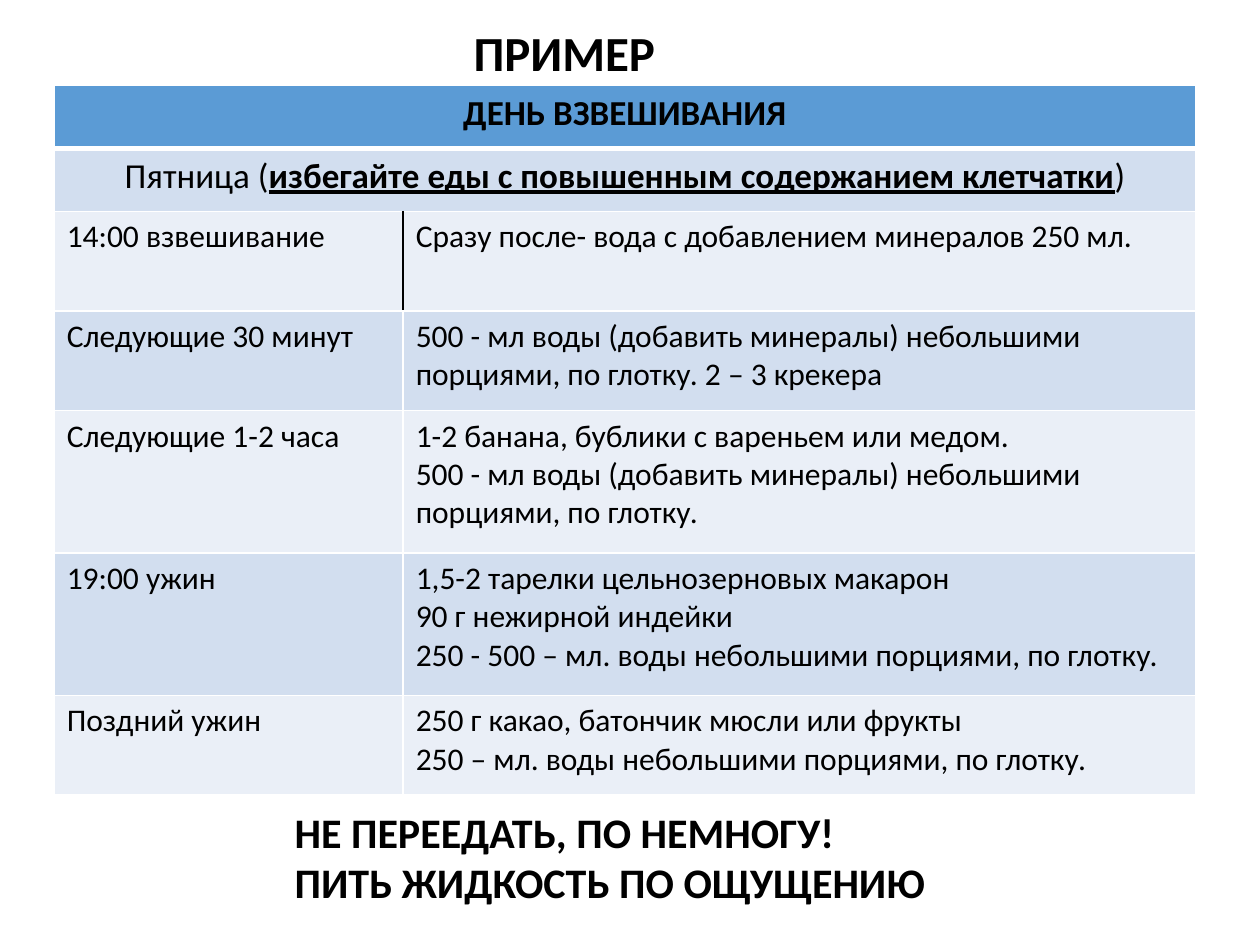
import pptx
import pptx.dml.color
import pptx.enum.text
import pptx.util
from lxml import etree
from pptx.oxml.ns import qn

SLIDE_WIDTH, SLIDE_HEIGHT = 10, 7.5
COLUMN_WIDTHS = [2.77, 6.29]
ROW_HEIGHTS = [0.5, 0.5, 0.79, 0.79, 1.13, 1.13, 0.79]
HEADER_FILL, BAND_FILLS = "5B9BD5", ["EAEFF7", "D2DEEF"]
WHITE, BLACK = "FFFFFF", "000000"
CENTER = pptx.enum.text.PP_ALIGN.CENTER

HEADINGS = [
    [("ДЕНЬ ВЗВЕШИВАНИЯ", {"bold": True})],
    [
        ("Пятница (", {}),
        ("избегайте еды с повышенным содержанием клетчатки", {"bold": True, "underline": True}),
        (")", {}),
    ],
]
SCHEDULE = [
    ("14:00 взвешивание", ["Сразу после- вода с добавлением минералов 250 мл."]),
    ("Следующие 30 минут", [
        "500 - мл воды (добавить минералы) небольшими порциями, по глотку. 2 – 3 крекера",
    ]),
    ("Следующие 1-2 часа", [
        "1-2 банана, бублики с вареньем или медом.",
        "500 - мл воды (добавить минералы) небольшими порциями, по глотку.",
    ]),
    ("19:00 ужин", [
        "1,5-2 тарелки цельнозерновых макарон",
        "90 г нежирной индейки",
        "250 - 500 – мл. воды небольшими порциями, по глотку.",
    ]),
    ("Поздний ужин", [
        "250 г какао, батончик мюсли или фрукты",
        "250 – мл. воды небольшими порциями, по глотку.",
    ]),
]


def color(hex_value):
    return pptx.dml.color.RGBColor.from_string(hex_value)


def inches(*values):
    return [pptx.util.Inches(value) for value in values]


def write_paragraphs(frame, paragraphs, size, alignment=None):
    """Fill a text frame; each paragraph is a list of (text, format) runs."""
    for index, runs in enumerate(paragraphs):
        paragraph = frame.add_paragraph() if index else frame.paragraphs[0]
        paragraph.alignment = alignment
        for text, run_format in runs:
            run = paragraph.add_run()
            run.text = text
            values = {"name": "Calibri", "size": pptx.util.Pt(size), "bold": False, **run_format}
            for name, value in values.items():
                setattr(run.font, name, value)
            run.font.color.rgb = color(BLACK)


def set_borders(cell, **special):
    """Draw white 1 pt borders, except sides given as (colour, points)."""
    properties = cell._tc.get_or_add_tcPr()
    for side in "LRTB":
        hex_value, points = special.get(side, (WHITE, 1))
        line = etree.SubElement(properties, qn(f"a:ln{side}"), w=str(pptx.util.Pt(points)))
        fill = etree.SubElement(line, qn("a:solidFill"))
        etree.SubElement(fill, qn("a:srgbClr"), val=hex_value)


def style_cell(cell, fill, **borders):
    set_borders(cell, **borders)
    cell.fill.solid()
    cell.fill.fore_color.rgb = color(fill)


def add_schedule(slide, left, top):
    frame = slide.shapes.add_table(
        len(ROW_HEIGHTS), len(COLUMN_WIDTHS),
        *inches(left, top, sum(COLUMN_WIDTHS), sum(ROW_HEIGHTS)),
    )
    table = frame.table
    for column, width in zip(table.columns, inches(*COLUMN_WIDTHS)):
        column.width = width
    for row, height in zip(table.rows, inches(*ROW_HEIGHTS)):
        row.height = height

    special_borders = {
        (0, 0): {"B": (WHITE, 3)},
        (0, 1): {"B": (WHITE, 3)},
        (2, 0): {"R": (BLACK, 1)},
        (2, 1): {"L": (BLACK, 1)},
    }
    for row in range(len(ROW_HEIGHTS)):
        fill = BAND_FILLS[row % 2] if row else HEADER_FILL
        for column in range(len(COLUMN_WIDTHS)):
            style_cell(table.cell(row, column), fill, **special_borders.get((row, column), {}))

    for row, runs in enumerate(HEADINGS):
        cell = table.cell(row, 0)
        cell.merge(table.cell(row, 1))
        write_paragraphs(cell.text_frame, [runs], 20, CENTER)
    for row, (time, advice) in enumerate(SCHEDULE, len(HEADINGS)):
        for column, lines in enumerate([[time], advice]):
            paragraphs = [[(line, {})] for line in lines]
            write_paragraphs(table.cell(row, column).text_frame, paragraphs, 18)


def add_caption(slide, lines, size, left, top, width, height):
    box = slide.shapes.add_textbox(*inches(left, top, width, height))
    frame = box.text_frame
    frame.word_wrap = False
    frame.auto_size = pptx.enum.text.MSO_AUTO_SIZE.SHAPE_TO_FIT_TEXT
    write_paragraphs(frame, [[(line, {"bold": True})] for line in lines], size)


def main():
    presentation = pptx.Presentation()
    presentation.slide_width, presentation.slide_height = inches(SLIDE_WIDTH, SLIDE_HEIGHT)
    slide = presentation.slides.add_slide(presentation.slide_layouts[6])
    add_schedule(slide, 0.43, 0.68)
    add_caption(slide, ["НЕ ПЕРЕЕДАТЬ, ПО НЕМНОГУ!", "ПИТЬ ЖИДКОСТЬ ПО ОЩУЩЕНИЮ"],
                24, 2.24, 6.35, 5.41, 0.91)
    add_caption(slide, ["ПРИМЕР"], 28, 3.66, 0.13, 1.75, 0.57)
    presentation.save("out.pptx")


if __name__ == "__main__":
    main()
